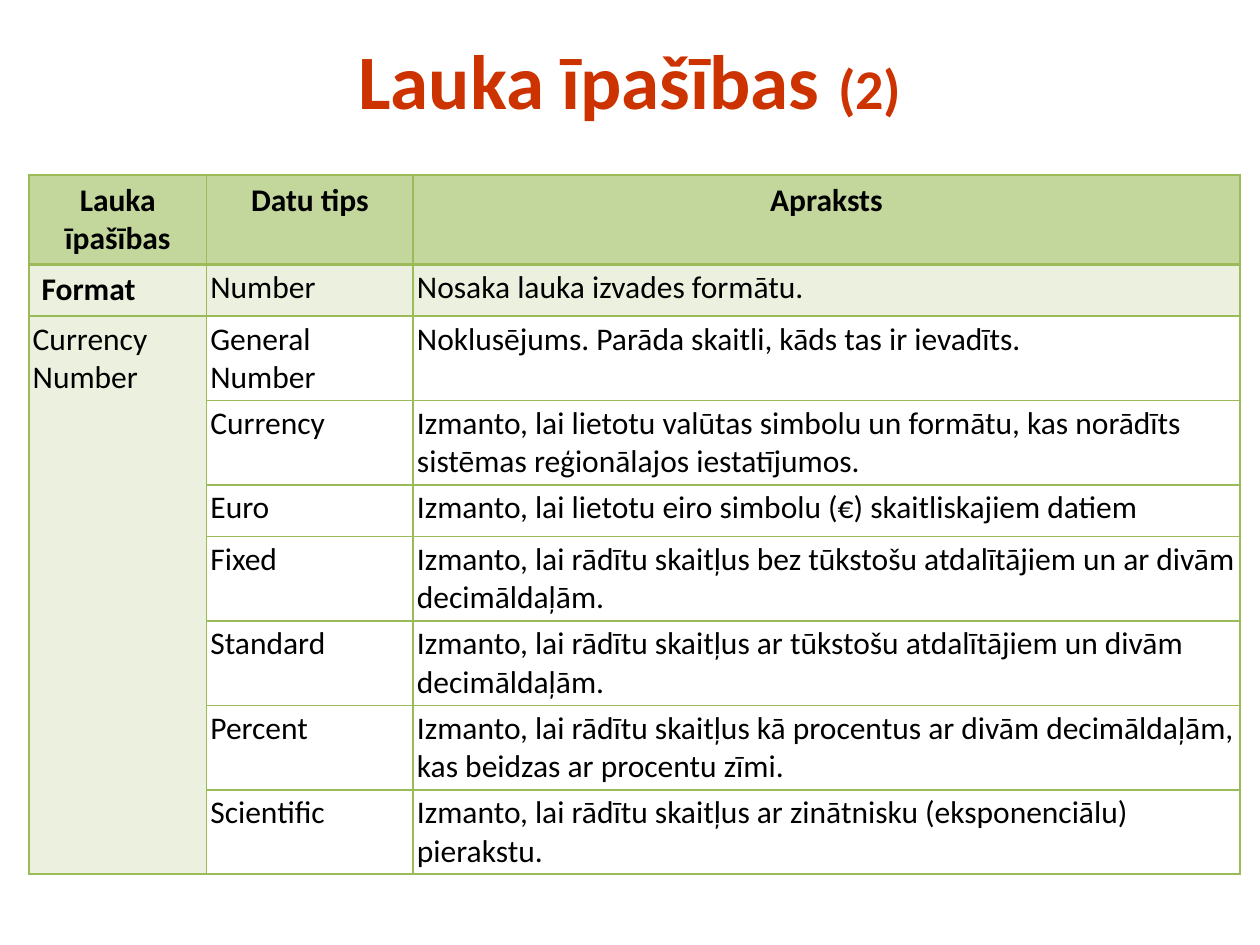
from lxml import etree
from pptx import Presentation
from pptx.dml.color import RGBColor
from pptx.enum.text import MSO_ANCHOR, PP_ALIGN
from pptx.oxml.ns import qn
from pptx.util import Inches, Pt

CENTER, LEFT, MIDDLE = PP_ALIGN.CENTER, PP_ALIGN.LEFT, MSO_ANCHOR.MIDDLE
TITLE_RED, HEADER_GREEN, PALE_GREEN, LINE_GREEN = "CC3300", "C3D69B", "EBF1DE", "9BBB59"
COLUMNS = [1.41, 1.64, 6.56]
HEADER_ROW, ONE_LINE, TWO_LINES = 0.71, 0.41, 0.67
CELL_INSET = 0.03

# Each row: height and the text of its cells
ROWS = [
    (HEADER_ROW, "Lauka īpašības", "Datu tips", "Apraksts"),
    (ONE_LINE, "Format", "Number", "Nosaka lauka izvades formātu."),
    (TWO_LINES, "Currency Number", "General Number",
     "Noklusējums. Parāda skaitli, kāds tas ir ievadīts."),
    (TWO_LINES, "", "Currency", "Izmanto, lai lietotu valūtas simbolu un formātu, "
     "kas norādīts sistēmas reģionālajos iestatījumos."),
    (ONE_LINE, "", "Euro", "Izmanto, lai lietotu eiro simbolu (€) skaitliskajiem datiem"),
    (TWO_LINES, "", "Fixed", "Izmanto, lai rādītu skaitļus bez tūkstošu atdalītājiem "
     "un ar divām decimāldaļām."),
    (TWO_LINES, "", "Standard", "Izmanto, lai rādītu skaitļus ar tūkstošu atdalītājiem "
     "un divām decimāldaļām."),
    (TWO_LINES, "", "Percent", "Izmanto, lai rādītu skaitļus kā procentus ar divām "
     "decimāldaļām, kas beidzas ar procentu zīmi."),
    (TWO_LINES, "", "Scientific", "Izmanto, lai rādītu skaitļus ar zinātnisku "
     "(eksponenciālu) pierakstu."),
]


def add_span(para, text, size, color, bold):
    span = para.add_run()
    span.text = text
    font_format = {"name": "Calibri", "size": Pt(size), "bold": bold}
    for name, value in font_format.items():
        setattr(span.font, name, value)
    span.font.color.rgb = RGBColor.from_string(color)


def set_borders(cell, widths):
    properties = cell._tc.get_or_add_tcPr()
    for position, (side, width) in enumerate(widths.items()):
        line = etree.Element(qn(f"a:ln{side}"), w=str(Pt(width)))
        fill = etree.SubElement(line, qn("a:solidFill"))
        etree.SubElement(fill, qn("a:srgbClr"), val=LINE_GREEN)
        properties.insert(position, line)


deck = Presentation()
deck.slide_width, deck.slide_height = Inches(10), Inches(7.5)
page = deck.slides.add_slide(deck.slide_layouts[6])

# Title
box = page.shapes.add_textbox(Inches(0.5), 0, Inches(9), Inches(1.25))
box.text_frame.word_wrap = True
box.text_frame.vertical_anchor = MIDDLE
para = box.text_frame.paragraphs[0]
para.alignment = CENTER
for text, size in [("Lauka īpašības ", 44), ("(2)", 32)]:
    add_span(para, text, size, TITLE_RED, True)

# Table grid
table = page.shapes.add_table(
    len(ROWS), len(COLUMNS), Inches(0.23), Inches(1.39),
    Inches(sum(COLUMNS)), Inches(sum(row[0] for row in ROWS))).table
table.first_row = table.horz_banding = False
for column, width in zip(table.columns, COLUMNS):
    column.width = Inches(width)

# Cells: green header, pale first row and first column
for r, (height, *texts) in enumerate(ROWS):
    table.rows[r].height = Inches(height)
    for c, text in enumerate(texts):
        cell = table.cell(r, c)
        is_header = r == 0
        is_bold = is_header or (r, c) == (1, 0)
        if is_header or r == 1 or c == 0:
            cell.fill.solid()
            cell.fill.fore_color.rgb = RGBColor.from_string(
                HEADER_GREEN if is_header else PALE_GREEN)
        else:
            cell.fill.background()
        if not is_bold:
            for side in ("left", "right", "top", "bottom"):
                setattr(cell, f"margin_{side}", Inches(CELL_INSET))
        set_borders(cell, {"L": 1, "R": 1, "T": 2 if r == 1 else 1, "B": 2 if is_header else 1})
        if text:
            para = cell.text_frame.paragraphs[0]
            para.alignment = CENTER if is_header else LEFT
            add_span(para, text, 18, "000000", is_bold)

# First column is one cell below the Format row
table.cell(2, 0).merge(table.cell(len(ROWS) - 1, 0))

deck.save("out.pptx")
